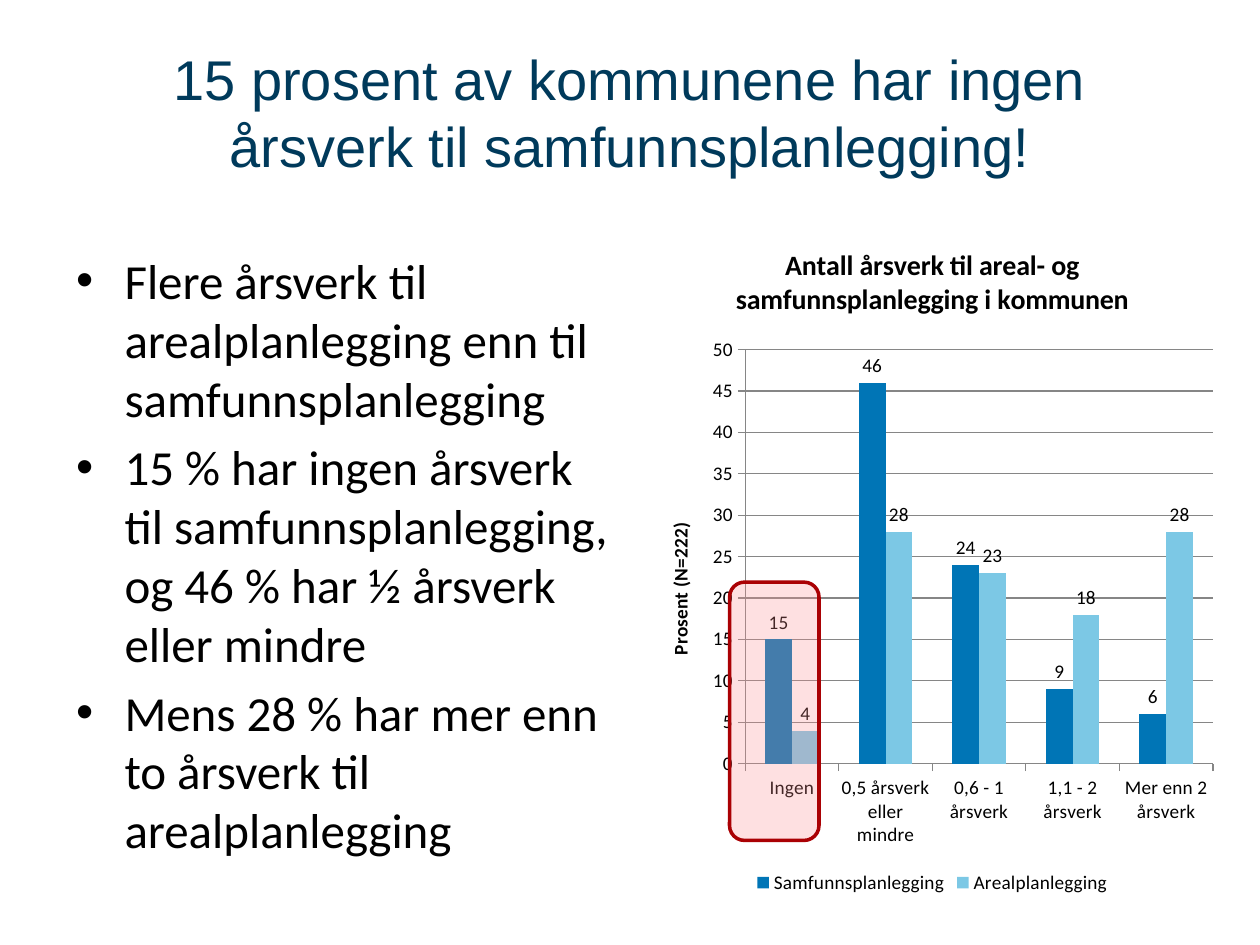
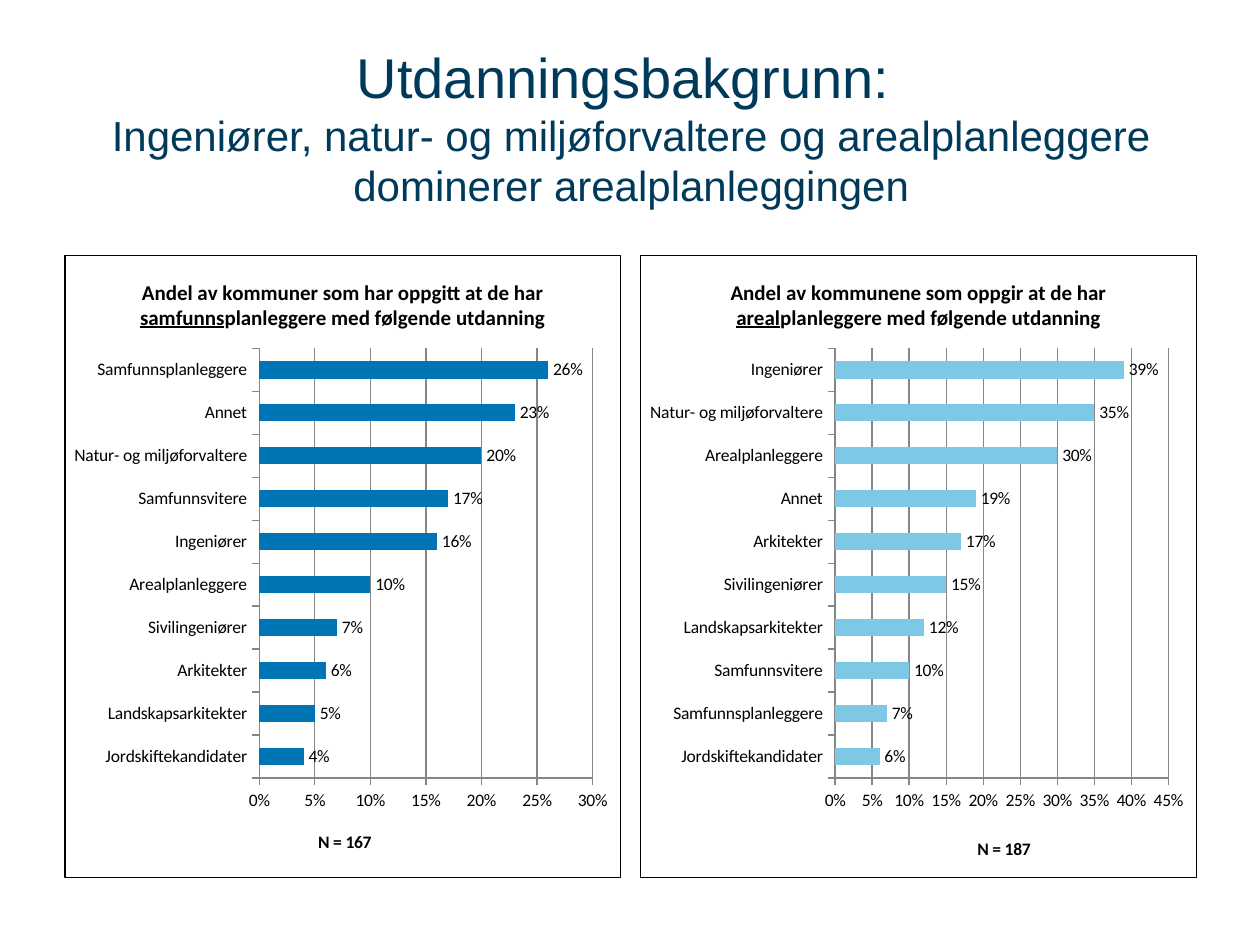
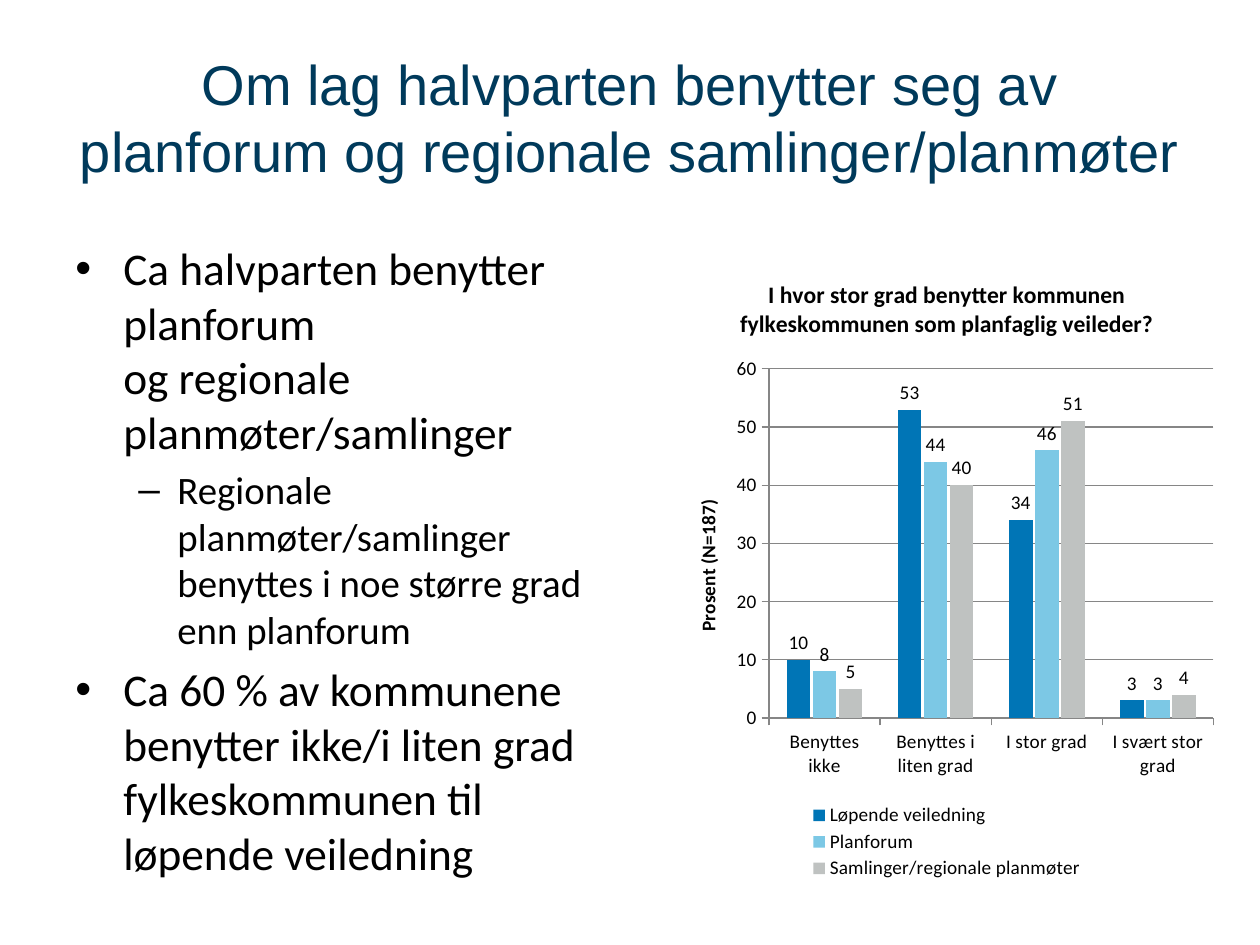
import pptx
import pptx.chart.data
import pptx.dml.color
import pptx.enum.chart
import pptx.enum.shapes
import pptx.enum.text
import pptx.oxml
import pptx.oxml.ns
import pptx.util
from lxml import etree

Pt = pptx.util.Pt
qn = pptx.oxml.ns.qn
ChartType = pptx.enum.chart.XL_CHART_TYPE

COLOURS = {
    "title": "003A5B",
    "text": "000000",
    "blue": "0075B6",
    "sky": "7CC8E5",
    "grey": "BFC2C1",
    "grid": "868686",
    "mark_fill": "FE9091",
    "mark_line": "AA0104",
}
BULLETS = [("•", 27.36, -27.36), ("–", 58.32, -22.32)]
LEFT, RIGHT = 36.72, 365.76
COLUMN_WIDTH = 318.24


def rgb(name):
    return pptx.dml.color.RGBColor.from_string(COLOURS[name])


def place(part, index, x, y, width=None, height=None):
    """Put a chart part at fractions of the chart's size."""
    for old in part.findall(qn("c:layout")):
        part.remove(old)
    layout = etree.Element(qn("c:layout"))
    manual = etree.SubElement(layout, qn("c:manualLayout"))
    settings = [("xMode", "edge"), ("yMode", "edge"), ("x", x), ("y", y)]
    if width:
        settings += [("w", width), ("h", height)]
        if part.tag == qn("c:plotArea"):
            settings.insert(0, ("layoutTarget", "inner"))
    for name, value in settings:
        etree.SubElement(manual, qn("c:" + name)).set("val", str(value))
    part.insert(index, layout)


def frame_chart(chart, bordered):
    line = f'<a:solidFill><a:srgbClr val="{COLOURS["text"]}"/></a:solidFill>'
    if not bordered:
        line = "<a:noFill/>"
    properties = pptx.oxml.parse_xml(
        f'<c:spPr {pptx.oxml.ns.nsdecls("c", "a")}><a:noFill/>'
        f'<a:ln w="{Pt(0.75)}">{line}</a:ln></c:spPr>')
    chart._chartSpace.find(qn("c:chart")).addnext(properties)


class SlideWriter:
    def __init__(self):
        self.deck = pptx.Presentation()
        self.deck.slide_width, self.deck.slide_height = Pt(720), Pt(540)
        self.page = None

    def add_page(self):
        self.page = self.deck.slides.add_slide(self.deck.slide_layouts[6])

    def style(self, font, size, colour="text", face="Calibri", bold=None):
        font.size, font.name, font.bold = Pt(size), face, bold
        font.color.rgb = rgb(colour)

    def text_frame(self, bounds):
        frame = self.page.shapes.add_textbox(*map(Pt, bounds)).text_frame
        frame.word_wrap = True
        return frame

    def title(self, text, bounds, subtitle=None):
        frame = self.text_frame(bounds)
        frame.vertical_anchor = pptx.enum.text.MSO_ANCHOR.MIDDLE
        para = frame.paragraphs[0]
        para.alignment = pptx.enum.text.PP_ALIGN.CENTER
        para.text = text
        self.style(para.font, 32, "title", "Arial")
        if subtitle:
            para.add_line_break()
            span = para.add_run()
            span.text = subtitle
            span.font.size = Pt(24)

    def bullets(self, items, bounds, sizes):
        """Write (level, text) items; sizes holds one text size per level."""
        frame = self.text_frame(bounds)
        for number, (level, text) in enumerate(items):
            para = frame.add_paragraph() if number else frame.paragraphs[0]
            para.text = text
            para.level = level
            symbol, margin, indent = BULLETS[level]
            properties = para._p.get_or_add_pPr()
            properties.set("marL", str(Pt(margin)))
            properties.set("indent", str(Pt(indent)))
            etree.SubElement(properties, qn("a:buFont")).set("typeface", "Arial")
            etree.SubElement(properties, qn("a:buChar")).set("char", symbol)
            if number:
                para.space_before = Pt(round(sizes[level] * 0.2, 1))
            self.style(para.font, sizes[level])

    def chart(self, kind, bounds, categories, series, heading, heading_size,
              plot_at, axis_title, axis_title_at, top, step,
              size=11, number_format="###0", bordered=False, overlap=None):
        """Series are (name, values, colour); heading is (text, underlined) spans."""
        data = pptx.chart.data.CategoryChartData(number_format=number_format)
        data.categories = categories
        for name, values, _ in series:
            data.add_series(name, values)
        chart = self.page.shapes.add_chart(kind, *map(Pt, bounds), data).chart
        self.style(chart.font, size)
        frame_chart(chart, bordered)

        para = chart.chart_title.text_frame.paragraphs[0]
        self.style(para.font, heading_size, bold=True)
        for text, underlined in heading:
            span = para.add_run()
            span.text = text
            if underlined:
                span.font.underline = True
        place(chart._chartSpace.find(".//" + qn("c:plotArea")), 0, *plot_at)

        plot = chart.plots[0]
        plot.gap_width = 150
        plot.vary_by_categories = False
        if overlap is not None:
            plot.overlap = overlap
        for bars, (_, _, colour) in zip(plot.series, series):
            bars.format.fill.solid()
            bars.format.fill.fore_color.rgb = rgb(colour)
            bars.invert_if_negative = False
        plot.has_data_labels = True
        labels = plot.data_labels
        labels.show_value = True
        labels.number_format, labels.number_format_is_linked = number_format, False
        labels.position = pptx.enum.chart.XL_LABEL_POSITION.OUTSIDE_END
        self.style(labels.font, size)

        self.axes(chart, axis_title, axis_title_at, top, step, size, number_format,
                  upright=kind == ChartType.COLUMN_CLUSTERED)
        chart.has_legend = False
        return chart

    def axes(self, chart, title, title_at, top, step, size, number_format, upright):
        value_axis = chart.value_axis
        value_axis.minimum_scale, value_axis.maximum_scale = 0, top
        value_axis.major_unit = step
        value_axis.has_major_gridlines = True
        value_axis.tick_labels.number_format = number_format
        value_axis.tick_labels.number_format_is_linked = False
        chart.category_axis.has_major_gridlines = False
        lines = [value_axis.major_gridlines.format.line]
        for axis in (value_axis, chart.category_axis):
            axis.major_tick_mark = pptx.enum.chart.XL_TICK_MARK.OUTSIDE
            axis.minor_tick_mark = pptx.enum.chart.XL_TICK_MARK.NONE
            self.style(axis.tick_labels.font, size)
            lines.append(axis.format.line)
        for line in lines:
            line.color.rgb = rgb("grid")
            line.width = Pt(0.75)
        frame = value_axis.axis_title.text_frame
        frame.text = title
        self.style(frame.paragraphs[0].font, size, bold=True)
        if upright:
            frame._txBody.bodyPr.set("rot", "-5400000")
            frame._txBody.bodyPr.set("vert", "horz")
        place(value_axis.axis_title._element, 1, *title_at)

    def legend(self, chart, bounds=None):
        chart.has_legend = True
        chart.legend.position = pptx.enum.chart.XL_LEGEND_POSITION.BOTTOM
        chart.legend.include_in_layout = False
        self.style(chart.legend.font, 11)
        if bounds:
            place(chart.legend._element, 1, *bounds)

    def highlight(self, bounds):
        box = self.page.shapes.add_shape(
            pptx.enum.shapes.MSO_SHAPE.ROUNDED_RECTANGLE, *map(Pt, bounds))
        box.shadow.inherit = False
        box.fill.solid()
        box.fill.fore_color.rgb = rgb("mark_fill")
        colour = box._element.spPr.find(".//" + qn("a:srgbClr"))
        etree.SubElement(colour, qn("a:alpha")).set("val", "27000")
        box.line.color.rgb = rgb("mark_line")
        box.line.width = Pt(2)


def staffing(writer):
    writer.add_page()
    writer.title("15 prosent av kommunene har ingen årsverk til samfunnsplanlegging!",
                 (36, 21.6, 648, 84.24))
    writer.bullets([
        (0, "Flere årsverk til arealplanlegging enn til samfunnsplanlegging"),
        (0, "15 % har ingen årsverk til samfunnsplanlegging, "
            "og 46 % har ½ årsverk eller mindre"),
        (0, "Mens 28 % har mer enn to årsverk til arealplanlegging"),
    ], (LEFT, 139.68, COLUMN_WIDTH, 356.4), [28])
    chart = writer.chart(
        ChartType.COLUMN_CLUSTERED, (RIGHT, 126, 334.08, 388.08),
        ["Ingen", "0,5 årsverk eller mindre", "0,6 - 1 årsverk",
         "1,1 - 2 årsverk", "Mer enn 2 årsverk"],
        [("Samfunnsplanlegging", [15, 46, 24, 9, 6], "blue"),
         ("Arealplanlegging", [4, 28, 23, 18, 28], "sky")],
        [("Antall årsverk til areal- og samfunnsplanlegging i kommunen", False)],
        16, (0.18, 0.19, 0.8, 0.61),
        "Prosent (N=222)", (0.04, 0.44), top=50, step=5)
    writer.legend(chart)
    writer.highlight((416.88, 332.64, 51.12, 147.6))


def education(writer):
    writer.add_page()
    writer.title("Utdanningsbakgrunn: ", (LEFT, 20.88, 648, 102.24),
                 "Ingeniører, natur- og miljøforvaltere og arealplanleggere "
                 "dominerer arealplanleggingen")
    panels = [
        (LEFT, "blue", 0.3, "N = 167", (0.45, 0.92),
         [("Andel av kommuner som har oppgitt at de har ", False),
          ("samfunns", True), ("planleggere med følgende utdanning", False)],
         {"Jordskiftekandidater": 0.04, "Landskapsarkitekter": 0.05,
          "Arkitekter": 0.06, "Sivilingeniører": 0.07, "Arealplanleggere": 0.1,
          "Ingeniører": 0.16, "Samfunnsvitere": 0.17,
          "Natur- og miljøforvaltere": 0.2, "Annet": 0.23,
          "Samfunnsplanleggere": 0.26}),
        (RIGHT, "sky", 0.45, "N = 187", (0.6, 0.93),
         [("Andel av kommunene som oppgir at de har ", False),
          ("areal", True), ("planleggere med følgende utdanning", False)],
         {"Jordskiftekandidater": 0.06, "Samfunnsplanleggere": 0.07,
          "Samfunnsvitere": 0.1, "Landskapsarkitekter": 0.12,
          "Sivilingeniører": 0.15, "Arkitekter": 0.17, "Annet": 0.19,
          "Arealplanleggere": 0.3, "Natur- og miljøforvaltere": 0.35,
          "Ingeniører": 0.39}),
    ]
    for left, colour, top, count, count_at, heading, shares in panels:
        writer.chart(
            ChartType.BAR_CLUSTERED, (left, 145.44, COLUMN_WIDTH, 356.4),
            list(shares), [("Series 1", list(shares.values()), colour)],
            heading, 12, (0.35, 0.15, 0.6, 0.69),
            count, count_at, top=top, step=0.05,
            size=10, number_format="0%", bordered=True)


def guidance(writer):
    writer.add_page()
    writer.title("Om lag halvparten benytter seg av planforum og regionale "
                 "samlinger/planmøter", (36, 21.6, 648, 90))
    chart = writer.chart(
        ChartType.COLUMN_CLUSTERED, (382.32, 145.44, 317.52, 362.88),
        ["Benyttes ikke", "Benyttes i liten grad", "I stor grad", "I svært stor grad"],
        [("Løpende veiledning", [10, 53, 34, 3], "blue"),
         ("Planforum", [8, 44, 46, 3], "sky"),
         ("Samlinger/regionale planmøter", [5, 40, 51, 4], "grey")],
        [("I hvor stor grad benytter kommunen fylkeskommunen som planfaglig "
          "veileder?", False)],
        13.5, (0.18, 0.18, 0.8, 0.55),
        "Prosent (N=187)", (0.04, 0.38), top=60, step=10, overlap=-10)
    writer.legend(chart, (0.24, 0.86, 0.52, 0.13))
    writer.bullets([
        (0, "Ca halvparten benytter planforum \vog regionale planmøter/samlinger"),
        (1, "Regionale planmøter/samlinger benyttes i noe større grad enn planforum"),
        (0, "Ca 60 % av kommunene benytter ikke/i liten grad fylkeskommunen "
            "til løpende veiledning"),
    ], (36, 133.92, COLUMN_WIDTH, 362.88), [25.9, 22.2])


def main():
    writer = SlideWriter()
    for build_slide in (staffing, education, guidance):
        build_slide(writer)
    writer.deck.save("out.pptx")


if __name__ == "__main__":
    main()
